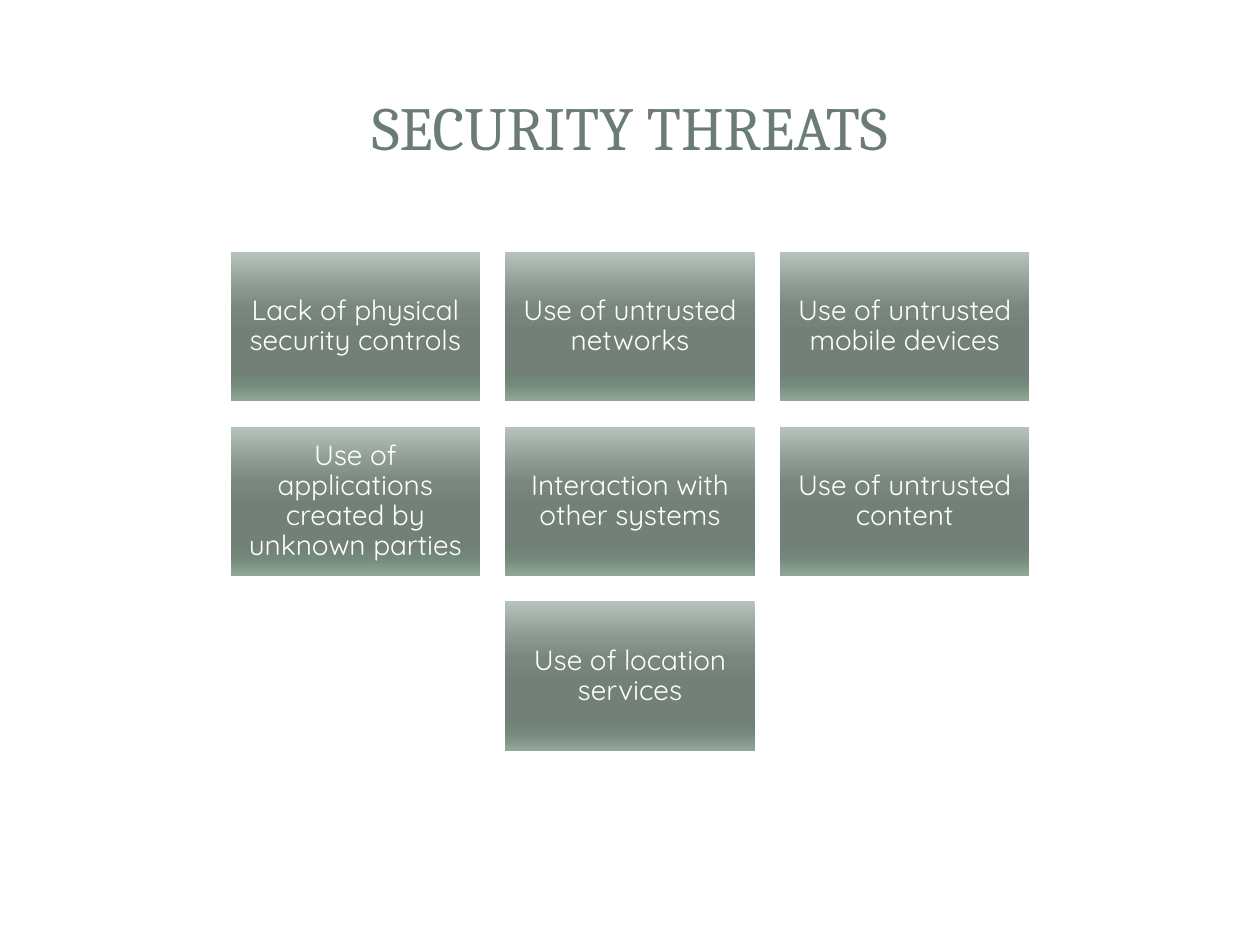
from lxml.etree import SubElement
from pptx import Presentation
from pptx.dml.color import RGBColor
from pptx.enum.shapes import MSO_SHAPE
from pptx.enum.text import MSO_ANCHOR, MSO_AUTO_SIZE, PP_ALIGN
from pptx.oxml.ns import qn
from pptx.util import Inches, Pt

WIDTH, HEIGHT = 10, 7.5
COLUMNS = 3
GAP = 0.2
GRADIENT = [
    (0, "B6C3BB"), (25, "8B9890"), (38, "79867E"), (55, "728078"),
    (80, "708176"), (88, "75887C"), (100, "91A79A"),
]
THREATS = [
    "Lack of physical security controls",
    "Use of untrusted networks",
    "Use of untrusted mobile devices",
    "Use of applications created by unknown parties",
    "Interaction with other systems",
    "Use of untrusted content",
    "Use of location services",
]


def color(value):
    return RGBColor.from_string(value)


def write(holder, text, *, font, size, fill, margin, spacing=1.0):
    frame = holder.text_frame
    frame.text = text
    frame.word_wrap = True
    frame.auto_size = MSO_AUTO_SIZE.NONE
    frame.vertical_anchor = MSO_ANCHOR.MIDDLE
    frame.margin_left = frame.margin_right = Inches(margin)
    frame.margin_top = frame.margin_bottom = Inches(margin)
    paragraph = frame.paragraphs[0]
    paragraph.alignment = PP_ALIGN.CENTER
    paragraph.line_spacing = spacing
    style = paragraph.runs[0].font
    style.name, style.size = font, Pt(size)
    style.color.rgb = color(fill)


def shade(card):
    card.fill.gradient()
    card.fill.gradient_angle = 270
    stops = card.fill._fill._gradFill.find(qn("a:gsLst"))
    for stop in list(stops):
        stops.remove(stop)
    for percent, value in GRADIENT:
        stop = SubElement(stops, qn("a:gs"), pos=str(percent * 1000))
        SubElement(stop, qn("a:srgbClr"), val=str(color(value)))


def place_title(slide, text, left, top, width, height):
    title = slide.shapes.title
    title.left, title.top = Inches(left), Inches(top)
    title.width, title.height = Inches(width), Inches(height)
    write(title, text, font="Cambria", size=35, fill="6B7D72", margin=0.05)


def place_card(slide, text, left, top, width, height):
    card = slide.shapes.add_shape(
        MSO_SHAPE.RECTANGLE,
        Inches(left), Inches(top), Inches(width), Inches(height),
    )
    card.shadow.inherit = False
    card.line.fill.background()
    shade(card)
    write(card, text, font="Quicksand", size=16, fill="FFFFFF",
          margin=0.07, spacing=0.9)


def place_threats(slide, threats, left, top, width, height):
    rows = [threats[i:i + COLUMNS] for i in range(0, len(threats), COLUMNS)]
    card_width = (width - GAP * (COLUMNS - 1)) / COLUMNS
    card_height = (height - GAP * (len(rows) - 1)) / len(rows)
    for row, names in enumerate(rows):
        indent = (COLUMNS - len(names)) / 2
        for column, name in enumerate(names):
            place_card(
                slide, name,
                left + (column + indent) * (card_width + GAP),
                top + row * (card_height + GAP),
                card_width, card_height,
            )


def main():
    deck = Presentation()
    deck.slide_width, deck.slide_height = Inches(WIDTH), Inches(HEIGHT)
    slide = deck.slides.add_slide(deck.slide_layouts[5])
    title_width, grid_width = 5.94, 6.34
    place_title(slide, "SECURITY THREATS",
                (WIDTH - title_width) / 2, 0.53, title_width, 0.94)
    place_threats(slide, THREATS,
                  (WIDTH - grid_width) / 2, 2, grid_width, 3.96)
    deck.save("out.pptx")


if __name__ == "__main__":
    main()
